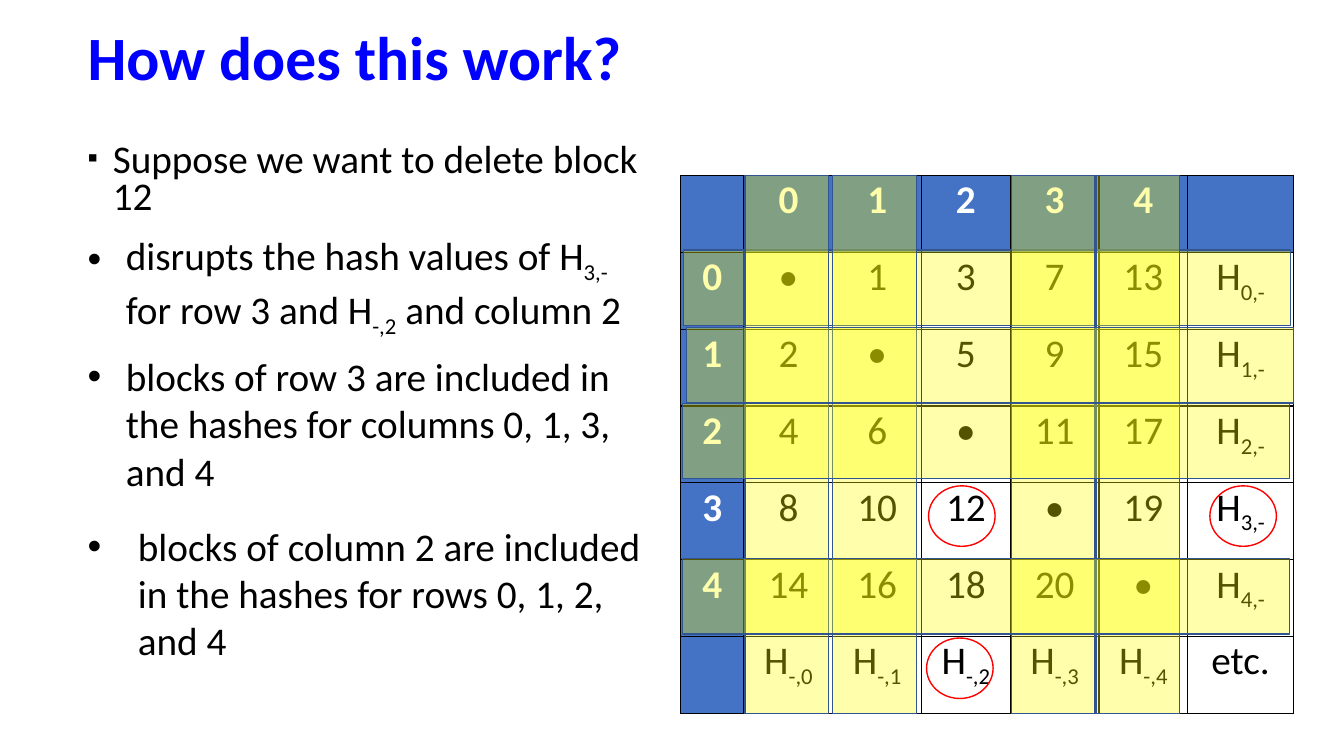
import pptx
import pptx.dml.color
import pptx.enum.shapes
import pptx.enum.text
import pptx.util
from lxml import etree
from pptx.oxml.ns import qn
from pptx.util import Inches, Pt

COLORS = {
    "title": "0000FF",
    "text": "000000",
    "header": "4472C4",
    "header_text": "FFFFFF",
    "cell": "FFFFFF",
    "border": "000000",
    "circle": "FF0000",
    "band": "FFFF00",
    "band_line": "325491",
}


def rgb(name):
    return pptx.dml.color.RGBColor.from_string(COLORS[name])


def write(frame, text, size=28, color="text", bold=False, align="LEFT",
          spacing=None, bullet=None, bullet_size=100, indent=0):
    """Fill the first paragraph; text in {braces} becomes a subscript."""
    para = frame.paragraphs[0]
    para.alignment = getattr(pptx.enum.text.PP_ALIGN, align)
    if spacing:
        para.line_spacing = spacing
    if bullet:
        props = para._p.get_or_add_pPr()
        props.set("marL", str(Inches(indent)))
        props.set("indent", str(-Inches(indent)))
        etree.SubElement(props, qn("a:buSzPct"), val=str(bullet_size * 1000))
        etree.SubElement(props, qn("a:buFont"), typeface="Arial")
        etree.SubElement(props, qn("a:buChar"), char=bullet)
    for index, part in enumerate(text.replace("}", "{").split("{")):
        if not part:
            continue
        span = para.add_run()
        span.text = part
        span.font.name = "Calibri"
        span.font.size = Pt(size)
        span.font.bold = bold
        span.font.color.rgb = rgb(color)
        if index % 2:
            span._r.get_or_add_rPr().set("baseline", "-25000")


deck = pptx.Presentation()
deck.slide_width = Inches(13.33)
deck.slide_height = Inches(7.5)
page = deck.slides.add_slide(deck.slide_layouts[6])

# Title and bullet text
title = page.shapes.add_textbox(Inches(0.77), Inches(-0.12), Inches(12.32), Inches(1.45))
title.text_frame.word_wrap = True
title.text_frame.vertical_anchor = pptx.enum.text.MSO_ANCHOR.MIDDLE
write(title.text_frame, "How does this work?", size=44, color="title", bold=True, spacing=0.9)

bullets = [
    (1.37, 5.65, 0.84, "Suppose we want to delete block 12",
     dict(bullet="▪", bullet_size=75, indent=0.25, spacing=0.8)),
    (2.25, 5.68, 1.04, "disrupts the hash values of H{3,-} for row 3 and H{-,2} and column 2",
     dict(bullet="•", indent=0.38)),
    (3.45, 5.68, 1.51, "blocks of row 3 are included in the hashes for columns 0, 1, 3, and 4",
     dict(bullet="•", indent=0.38)),
    (5.13, 5.9, 1.51, "blocks of column 2 are included in the hashes for rows 0, 1, 2, and 4",
     dict(bullet="•", indent=0.5)),
]
for top, width, height, text, style in bullets:
    box = page.shapes.add_textbox(Inches(0.77), Inches(top), Inches(width), Inches(height))
    box.text_frame.word_wrap = True
    write(box.text_frame, text, **style)

# Block table with row and column hashes
blocks = [
    ["", "0", "1", "2", "3", "4", ""],
    ["0", "•", "1", "3", "7", "13", "H{0,-}"],
    ["1", "2", "•", "5", "9", "15", "H{1,-}"],
    ["2", "4", "6", "•", "11", "17", "H{2,-}"],
    ["3", "8", "10", "12", "•", "19", "H{3,-}"],
    ["4", "14", "16", "18", "20", "•", "H{4,-}"],
    ["", "H{-,0}", "H{-,1}", "H{-,2}", "H{-,3}", "H{-,4}", "etc."],
]
column_widths = [0.63] + [0.88] * 5 + [1.05]
table = page.shapes.add_table(
    len(blocks), len(column_widths), Inches(6.75), Inches(1.74), Inches(6.05), Inches(5.34)).table
table.first_row = False
table.horz_banding = False
for column, width in zip(table.columns, column_widths):
    column.width = Inches(width)
for row_index, values in enumerate(blocks):
    for column_index, value in enumerate(values):
        cell = table.cell(row_index, column_index)
        is_header = row_index == 0 or column_index == 0
        cell.margin_left = cell.margin_right = Inches(0.01)
        cell.margin_top = cell.margin_bottom = Inches(0.01)
        for side in ("lnL", "lnR", "lnT", "lnB"):
            border = etree.SubElement(cell._tc.get_or_add_tcPr(), qn(f"a:{side}"), w=str(Pt(1)))
            border_fill = etree.SubElement(border, qn("a:solidFill"))
            etree.SubElement(border_fill, qn("a:srgbClr"), val=COLORS["border"])
        cell.fill.solid()
        cell.fill.fore_color.rgb = rgb("header" if is_header else "cell")
        write(cell.text_frame, value, align="CENTER", bold=is_header,
              color="header_text" if is_header else "text")

# Circles around the deleted block and its two hashes
for left, top in [(9.21, 4.82), (9.19, 6.33), (12, 4.82)]:
    circle = page.shapes.add_shape(
        pptx.enum.shapes.MSO_SHAPE.OVAL, Inches(left), Inches(top), Inches(0.66), Inches(0.6))
    circle.shadow.inherit = False
    circle.fill.background()
    circle.line.color.rgb = rgb("circle")
    circle.line.width = Pt(1)

# Translucent bands over the rows and columns that stay intact
row_size = (6.02, 0.75)
column_size = (0.83, 5.34)
bands = [(6.78, 2.48, row_size)]
bands += [(left, 1.74, column_size) for left in (7.39, 8.26, 10.03, 10.87)]
bands += [(6.81, 3.25, row_size), (6.77, 4, row_size), (6.77, 5.54, row_size)]
for left, top, (width, height) in bands:
    band = page.shapes.add_shape(
        pptx.enum.shapes.MSO_SHAPE.RECTANGLE,
        Inches(left), Inches(top), Inches(width), Inches(height))
    band.shadow.inherit = False
    band.fill.solid()
    band.fill.fore_color.rgb = rgb("band")
    band_color = band._element.spPr.find(qn("a:solidFill")).find(qn("a:srgbClr"))
    etree.SubElement(band_color, qn("a:alpha"), val="33000")
    band.line.color.rgb = rgb("band_line")
    band.line.width = Pt(1)

deck.save("out.pptx")
